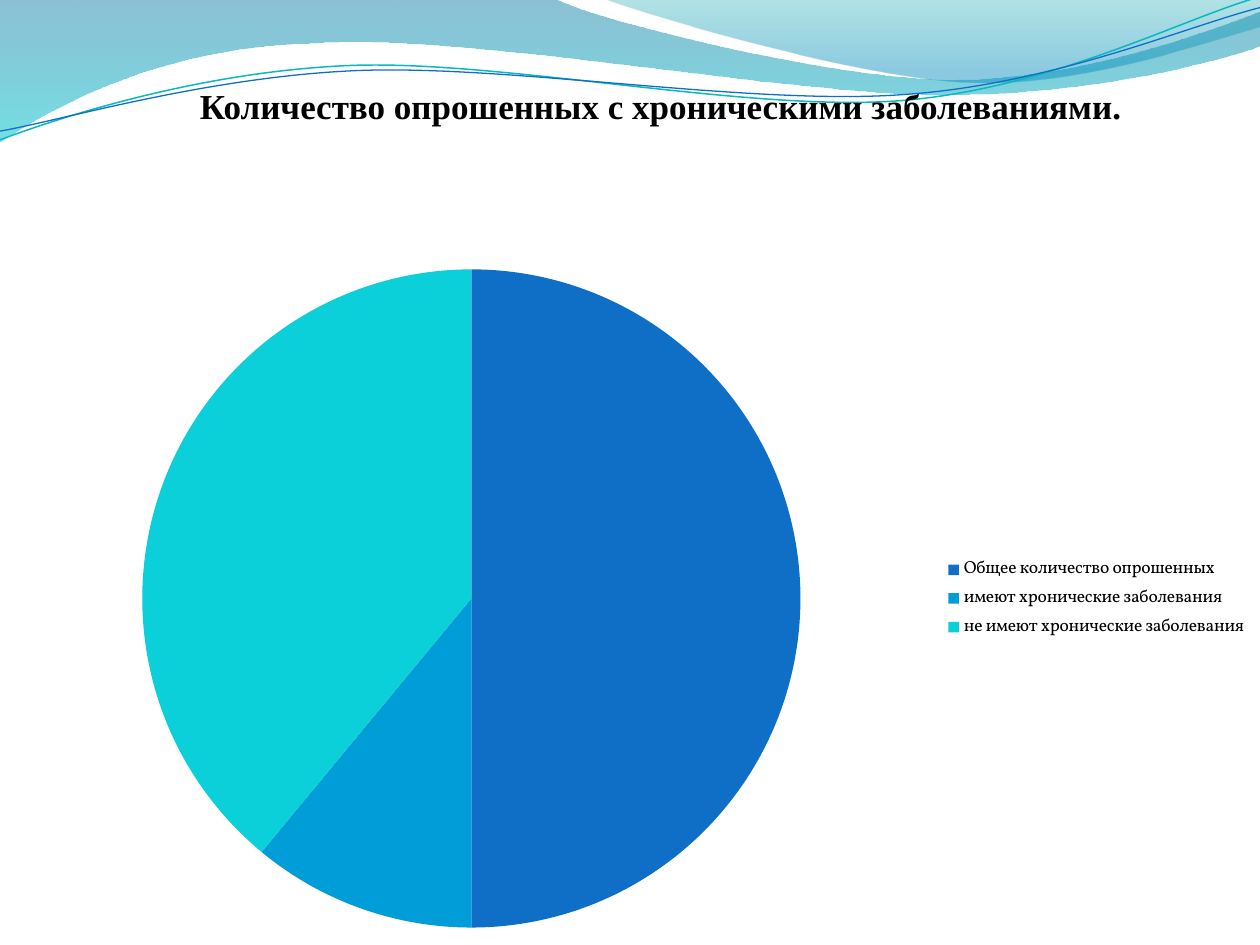
import math

from lxml import etree
from pptx import Presentation, util as u
from pptx.chart.data import CategoryChartData
from pptx.dml.color import RGBColor
from pptx.enum import chart as charts, text
from pptx.oxml.ns import qn

COLORS = {
    "text": "000000", "blue": "0F6FC6", "sky": "009DD9", "cyan": "0BD0D9",
    "teal_line": "0AB8BF", "deep": "0074A1", "aqua": "00C6CF",
    "teal": "00A1A9", "azure": "008BBF",
}
TILT = -2.7  # degrees, for the two thin curves

# Each wave: start point, then segments of one point (line) or three (curve)
MAIN_WAVE = [[(0, 0)], [(4.4, -0.01)],
             [(4.76, 0.17), (6.64, 0.63), (7.58, 0.63)],
             [(8.53, 0.63), (9.58, 0.26), (10, 0.09)], [(10.01, 0.36)],
             [(9.83, 0.44), (8.7, 0.76), (7.46, 0.75)],
             [(6.22, 0.75), (3.82, 0.28), (2.57, 0.34)],
             [(1.29, 0.36), (0.46, 0.83), (-0.01, 1.13)], [(0, 0)]]
RIGHT_WAVE = [[(4.79, -0.01)], [(5.09, 0.11), (6.82, 0.62), (7.69, 0.65)],
              [(8.56, 0.69), (9.61, 0.32), (10, 0.21)], [(10, 0)], [(4.79, -0.01)]]
TEAL_CURVE = [[(0, 1.11)], [(0.48, 0.93), (1.58, 0.57), (2.77, 0.52)],
              [(3.95, 0.47), (5.93, 0.89), (7.13, 0.8)],
              [(8.33, 0.71), (9.38, 0.15), (9.98, -0.02)]]
BLUE_CURVE = [[(0, 1.04)], [(0.47, 0.96), (1.64, 0.61), (2.83, 0.56)],
              [(4.03, 0.51), (5.97, 0.84), (7.17, 0.75)],
              [(8.36, 0.67), (9.41, 0.21), (10, 0.06)]]


def rgb(name):
    return RGBColor.from_string(COLORS[name])


def turn(outline, center, degrees):
    """Rotate an outline clockwise about a centre."""
    cos, sin = math.cos(math.radians(degrees)), math.sin(math.radians(degrees))
    cx, cy = center
    return [[(cx + (x - cx) * cos - (y - cy) * sin, cy + (x - cx) * sin + (y - cy) * cos)
             for x, y in segment] for segment in outline]


def add_outline(shapes, left, top, outline, close):
    points = [(left + u.Inches(x), top + u.Inches(y))
              for segment in outline for x, y in segment]
    builder = shapes.build_freeform(*points[0])
    builder.add_line_segments(points[1:], close=close)
    shape = builder.convert_to_shape()
    shape.shadow.inherit = False
    # Merge each run of three line points into one Bezier curve
    lines = iter(list(shape._element.iter(qn("a:lnTo"))))
    for segment in outline[1:]:
        nodes = [next(lines) for _ in segment]
        if len(nodes) == 3:
            nodes[0].addprevious(curve := etree.Element(qn("a:cubicBezTo")))
            for node in nodes:
                curve.append(node[0])
                node.getparent().remove(node)
    return shape


def add_wave(page, left, top, outline, stops):
    """Filled wave; stops are (position, colour, opacity in percent)."""
    shape = add_outline(page.shapes, left, top, outline, True)
    shape.line.fill.background()
    shape.fill.gradient()
    shape.fill.gradient_angle = 270
    for stop, (position, color, _) in zip(shape.fill.gradient_stops, stops):
        stop.position = position
        stop.color.rgb = rgb(color)
    grad = shape._element.spPr.find(qn("a:gradFill"))
    for node, (_, _, opacity) in zip(grad.iter(qn("a:srgbClr")), stops):
        etree.SubElement(node, qn("a:alpha")).set("val", str(opacity * 1000))


def add_curve(group, left, top, outline, center, color, width):
    shape = add_outline(group.shapes, left, top, turn(outline, center, -TILT), False)
    shape.rotation = TILT
    shape.fill.background()
    shape.line.color.rgb = rgb(color)
    shape.line.width = u.Pt(width)


def add_header(page, left, top):
    add_wave(page, left, top, MAIN_WAVE, [(0, "deep", 45), (1, "aqua", 55)])
    add_wave(page, left, top, RIGHT_WAVE, [(0, "teal", 30), (0.8, "azure", 45)])
    group = page.shapes.add_group_shape()
    add_curve(group, left, top, TEAL_CURVE, (4.99, 0.57), "teal_line", 0.85)
    add_curve(group, left, top, BLUE_CURVE, (4.99, 0.59), "blue", 0.75)


def add_pie(page, left, top, width, height):
    data = CategoryChartData()
    data.categories = ["Общее количество опрошенных", "имеют хронические заболевания",
                       "не имеют хронические заболевания"]
    data.add_series("Series 1", (50, 11, 39))
    chart = page.shapes.add_chart(charts.XL_CHART_TYPE.PIE, left, top, width, height, data).chart
    chart.has_title = False
    chart.font.name = "Vollkorn"
    chart.font.size = u.Pt(10)
    chart.font.color.rgb = rgb("text")
    chart.has_legend = True
    chart.legend.position = charts.XL_LEGEND_POSITION.RIGHT
    chart.legend.include_in_layout = False
    plot = chart.plots[0]
    plot.vary_by_categories = True
    for index, color in enumerate(("blue", "sky", "cyan")):
        fill = plot.series[0].points[index].format.fill
        fill.solid()
        fill.fore_color.rgb = rgb(color)


def add_title(page, left, top, width, height):
    box = page.shapes.add_textbox(left, top, width, height)
    frame = box.text_frame
    frame.word_wrap = True
    frame.vertical_anchor = text.MSO_ANCHOR.MIDDLE
    frame.auto_size = text.MSO_AUTO_SIZE.SHAPE_TO_FIT_TEXT
    para = frame.paragraphs[0]
    para.text = "Количество опрошенных с хроническими заболеваниями."
    para.alignment = text.PP_ALIGN.CENTER
    para._p.get_or_add_pPr().set("indent", str(u.Inches(0.49)))
    para.font.name = "Times New Roman"
    para.font.size = u.Pt(20)
    para.font.bold = True
    para.font.color.rgb = rgb("text")


def main():
    deck = Presentation()
    deck.slide_width, deck.slide_height = u.Inches(10), u.Inches(7.5)
    page = deck.slides.add_slide(deck.slide_layouts[6])
    add_header(page, u.Inches(0), u.Inches(0))
    add_pie(page, u.Inches(0), u.Inches(2), u.Inches(10), u.Inches(5.5))
    add_title(page, u.Inches(0), u.Inches(0.62), u.Inches(10), u.Inches(0.44))
    deck.save("out.pptx")


if __name__ == "__main__":
    main()
